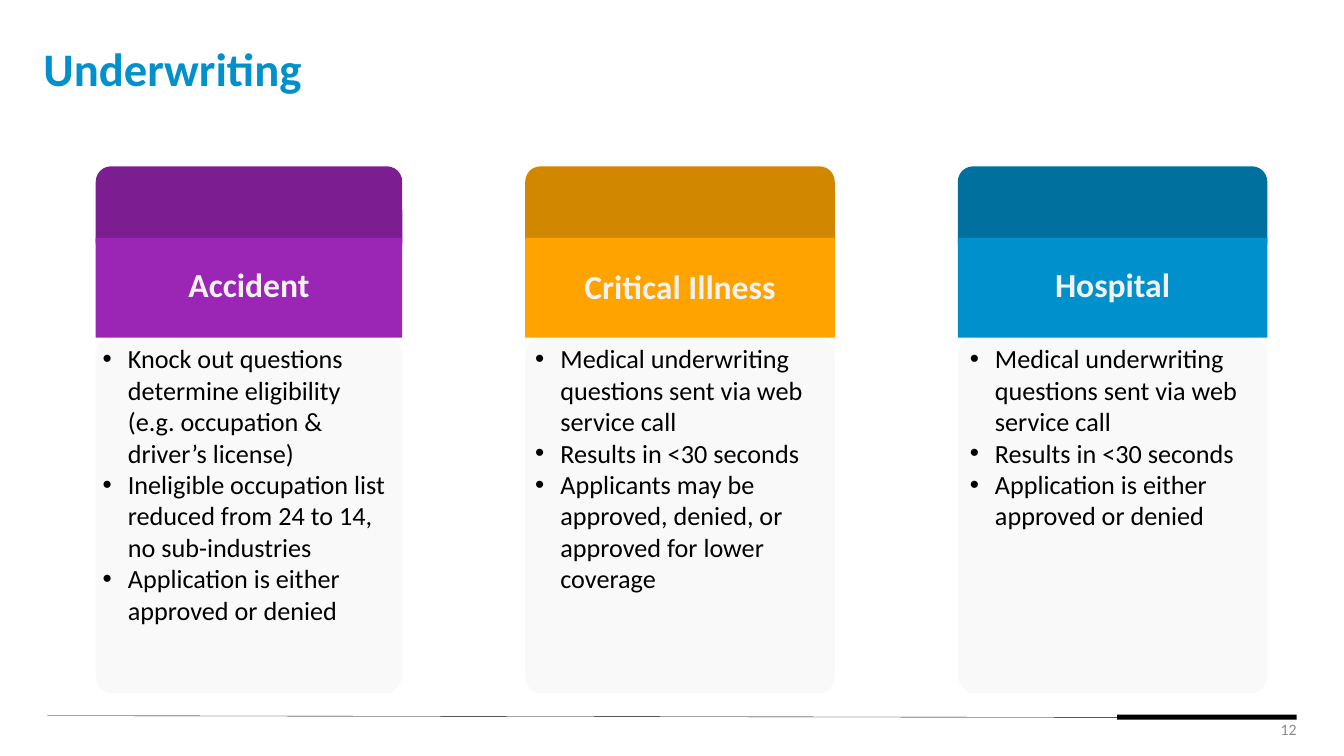
"""Builds the Underwriting slide with three product columns."""
from lxml import etree
from pptx import Presentation
from pptx.dml.color import RGBColor
from pptx.enum.shapes import MSO_CONNECTOR, MSO_SHAPE
from pptx.enum.text import MSO_ANCHOR, MSO_AUTO_SIZE, PP_ALIGN
from pptx.oxml.ns import qn
from pptx.util import Inches, Pt

RECT, ROUNDED = MSO_SHAPE.RECTANGLE, MSO_SHAPE.ROUNDED_RECTANGLE
STRAIGHT = MSO_CONNECTOR.STRAIGHT
LEFT, CENTER, RIGHT = PP_ALIGN.LEFT, PP_ALIGN.CENTER, PP_ALIGN.RIGHT
TOP, MIDDLE = MSO_ANCHOR.TOP, MSO_ANCHOR.MIDDLE
NO_AUTOFIT = MSO_AUTO_SIZE.NONE

FONT = "Calibri"
BLACK = RGBColor(0x00, 0x00, 0x00)
GRAY = RGBColor(0x8C, 0x8C, 0x8C)
LIGHT = RGBColor(0xF2, 0xF2, 0xF2)
BLUE = RGBColor(0x00, 0x91, 0xCC)
DARK_BLUE = RGBColor(0x00, 0x71, 0x9E)
ORANGE = RGBColor(0xFF, 0xA3, 0x00)
DARK_ORANGE = RGBColor(0xD2, 0x87, 0x00)
PURPLE = RGBColor(0x9B, 0x26, 0xB6)
DARK_PURPLE = RGBColor(0x7C, 0x1E, 0x92)

CARD_TOP, BAND_TOP, BODY_TOP = 1.65, 2.36, 3.35
CAP_HEIGHT, BODY_HEIGHT = 0.91, 3.53

MEDICAL = "Medical underwriting questions sent via web service call"
RESULTS = "Results in <30 seconds"
EITHER = "Application is either approved or denied"

# heading, heading top, card left, card width, list left, colours, list items
PRODUCTS = [
    ("Accident", 2.57, 0.95, 3.04, 0.92, DARK_PURPLE, PURPLE, [
        "Knock out questions determine eligibility (e.g. occupation & driver’s license)",
        "Ineligible occupation list reduced from 24 to 14, no sub-industries",
        EITHER]),
    ("Critical Illness", 2.59, 5.21, 3.07, 5.21, DARK_ORANGE, ORANGE, [
        MEDICAL, RESULTS,
        "Applicants may be approved, denied, or approved for lower coverage"]),
    ("Hospital", 2.57, 9.5, 3.07, 9.52, DARK_BLUE, BLUE, [
        MEDICAL, RESULTS, EITHER]),
]


def add_block(slide, kind, left, top, width, height, color):
    """Add a borderless filled shape."""
    block = slide.shapes.add_shape(
        kind, Inches(left), Inches(top), Inches(width), Inches(height))
    block.shadow.inherit = False
    block.fill.solid()
    block.fill.fore_color.rgb = color
    block.line.fill.background()
    return block


def set_opacity(block, percent):
    """Make a solid fill partly transparent."""
    color = block.fill._xPr.find(qn("a:solidFill"))[0]
    etree.SubElement(color, qn("a:alpha"), val=str(percent * 1000))


def style(paragraph, size, color, bold=False, align=LEFT):
    """Set the font and alignment of a paragraph."""
    paragraph.alignment = align
    paragraph.font.name = FONT
    paragraph.font.size = Pt(size)
    paragraph.font.bold = bold
    paragraph.font.color.rgb = color


def add_bullet(paragraph):
    """Give a paragraph a hanging bullet."""
    properties = paragraph._p.get_or_add_pPr()
    indent = Inches(0.25)
    properties.set("marL", str(indent))
    properties.set("indent", str(-indent))
    etree.SubElement(properties, qn("a:buFont"), typeface="Arial")
    etree.SubElement(properties, qn("a:buChar"), char="•")


def add_text(slide, left, top, width, height, anchor=TOP):
    """Add a wrapping text box and return its frame."""
    box = slide.shapes.add_textbox(
        Inches(left), Inches(top), Inches(width), Inches(height))
    frame = box.text_frame
    frame.word_wrap = True
    frame.vertical_anchor = anchor
    return frame


def add_title(slide, text):
    """Place and format the title placeholder."""
    title = slide.shapes.title
    title.left, title.top = Inches(0.33), Inches(0.48)
    title.width, title.height = Inches(12.67), Inches(0.45)
    frame = title.text_frame
    frame.text = text
    frame.auto_size = NO_AUTOFIT
    frame.vertical_anchor = MIDDLE
    frame.paragraphs[0].line_spacing = 0.9
    style(frame.paragraphs[0], 33.3, BLUE, bold=True)


def add_product(slide, heading, heading_top, left, width, list_left,
                cap_color, band_color, items):
    """Add one product column with its cap, heading band and list."""
    panel = add_block(slide, ROUNDED, left, BODY_TOP, width, BODY_HEIGHT, LIGHT)
    panel.adjustments[0] = 0.055
    set_opacity(panel, 40)
    add_block(slide, ROUNDED, left, CARD_TOP, width, CAP_HEIGHT, cap_color)
    add_block(slide, RECT, left, BAND_TOP, width, BODY_TOP - BAND_TOP, band_color)

    label = add_text(slide, left, heading_top, width, 0.5)
    label.text = heading
    style(label.paragraphs[0], 24, LIGHT, bold=True, align=CENTER)

    details = add_text(slide, list_left, BODY_TOP, width, 2.94)
    details.text = "\n".join(items)
    for paragraph in details.paragraphs:
        add_bullet(paragraph)
        style(paragraph, 18.7, BLACK)


def add_footer(slide, number):
    """Add the footer rule, its thick end and the page number."""
    rule = slide.shapes.add_connector(
        STRAIGHT, Inches(0.47), Inches(7.1), Inches(12.54), Inches(7.12))
    rule.line.color.rgb = BLACK
    rule.line.width = Pt(0.25)
    etree.SubElement(rule._element.spPr, qn("a:effectLst"))
    add_block(slide, RECT, 11.08, 7.09, 1.78, 0.05, BLACK)

    page = add_text(slide, 12.1, 7.14, 0.76, 0.19, MIDDLE)
    page.margin_right = 0
    page.text = number
    style(page.paragraphs[0], 11.3, GRAY, align=RIGHT)


def main():
    """Build and save the slide."""
    deck = Presentation()
    deck.slide_width, deck.slide_height = Inches(13.33), Inches(7.5)
    slide = deck.slides.add_slide(deck.slide_layouts.get_by_name("Title Only"))
    add_footer(slide, "12")
    add_title(slide, "Underwriting")
    for product in PRODUCTS:
        add_product(slide, *product)
    deck.save("out.pptx")


if __name__ == "__main__":
    main()
